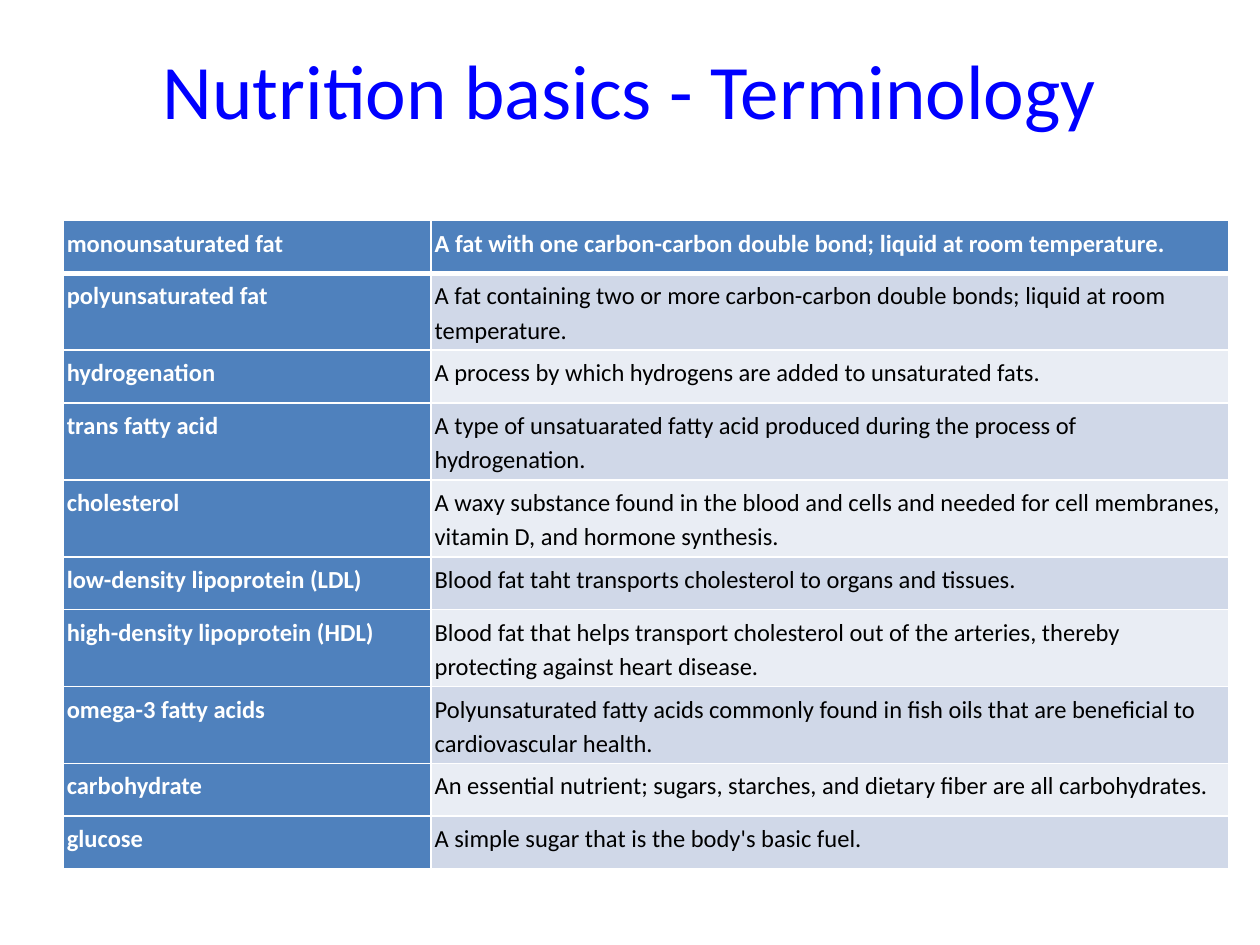
from lxml.etree import SubElement
from pptx import Presentation
from pptx.dml.color import RGBColor
from pptx.enum.text import MSO_ANCHOR, PP_ALIGN
from pptx.oxml.ns import qn
from pptx.util import Inches, Pt

COLORS = {
    "title": "0000FF",
    "term": "4F81BD",
    "odd": "D0D8E8",
    "even": "E9EDF4",
    "light": "FFFFFF",
    "dark": "000000",
}
SHORT, TALL = 0.42, 0.61
TERMS = [
    ("monounsaturated fat", SHORT,
     "A fat with one carbon-carbon double bond; liquid at room temperature."),
    ("polyunsaturated fat", TALL,
     "A fat containing two or more carbon-carbon double bonds; liquid at room temperature."),
    ("hydrogenation", SHORT,
     "A process by which hydrogens are added to unsaturated fats."),
    ("trans fatty acid", TALL,
     "A type of unsatuarated fatty acid produced during the process of hydrogenation."),
    ("cholesterol", TALL,
     "A waxy substance found in the blood and cells and needed for cell membranes, "
     "vitamin D, and hormone synthesis."),
    ("low-density lipoprotein (LDL)", SHORT,
     "Blood fat taht transports cholesterol to organs and tissues."),
    ("high-density lipoprotein (HDL)", TALL,
     "Blood fat that helps transport cholesterol out of the arteries, "
     "thereby protecting against heart disease."),
    ("omega-3 fatty acids", TALL,
     "Polyunsaturated fatty acids commonly found in fish oils that are beneficial "
     "to cardiovascular health."),
    ("carbohydrate", SHORT,
     "An essential nutrient; sugars, starches, and dietary fiber are all carbohydrates."),
    ("glucose", SHORT, "A simple sugar that is the body's basic fuel."),
]


def set_attributes(target, values):
    for name, value in values.items():
        setattr(target, name, value)


class SlideBuilder:
    """Holds the text style and the slide being filled."""

    font_name = "Calibri"
    cell_margin = Inches(0.03)

    def __init__(self, slide):
        self.slide = slide

    def add_text(self, para, text, color, **font_values):
        span = para.add_run()
        span.text = text
        set_attributes(span.font, {"name": self.font_name, **font_values})
        span.font.color.rgb = RGBColor.from_string(COLORS[color])

    def title(self, text, left, top, width, height):
        box = self.slide.shapes.title
        set_attributes(box, {"left": Inches(left), "top": Inches(top),
                             "width": Inches(width), "height": Inches(height)})
        box.text_frame.vertical_anchor = MSO_ANCHOR.MIDDLE
        para = box.text_frame.paragraphs[0]
        para.alignment = PP_ALIGN.CENTER
        self.add_text(para, text, "title", size=Pt(44))

    def borders(self, cell, widths):
        """Draw cell edges; widths maps L, R, T and B to points."""
        properties = cell._tc.get_or_add_tcPr()
        for side, width in widths.items():
            line = SubElement(properties, qn(f"a:ln{side}"), w=str(Pt(width)))
            fill = SubElement(line, qn("a:solidFill"))
            SubElement(fill, qn("a:srgbClr"), val=COLORS["light"])

    def cell(self, cell, text, fill, strong, widths):
        self.borders(cell, widths)
        cell.fill.solid()
        cell.fill.fore_color.rgb = RGBColor.from_string(COLORS[fill])
        sides = ("left", "right", "top", "bottom")
        set_attributes(cell, {f"margin_{side}": self.cell_margin for side in sides})
        para = cell.text_frame.paragraphs[0]
        para.line_spacing = 1.15
        self.add_text(para, text, "light" if strong else "dark", size=Pt(14), bold=strong)

    def term_table(self, terms, left, top, column_widths):
        height = sum(row_height for _, row_height, _ in terms)
        table = self.slide.shapes.add_table(
            len(terms), len(column_widths), Inches(left), Inches(top),
            Inches(sum(column_widths)), Inches(height)).table
        table.first_col = True
        for column, width in zip(table.columns, column_widths):
            column.width = Inches(width)
        for index, (term, row_height, meaning) in enumerate(terms):
            table.rows[index].height = Inches(row_height)
            widths = {"L": 1, "R": 1, "T": 3 if index == 1 else 1,
                      "B": 3 if index == 0 else 1}
            band = "odd" if index % 2 else "even"
            header = index == 0
            self.cell(table.cell(index, 0), term, "term", True, widths)
            self.cell(table.cell(index, 1), meaning, "term" if header else band,
                      header, widths)


def main():
    deck = Presentation()
    set_attributes(deck, {"slide_width": Inches(10), "slide_height": Inches(7.5)})
    page = SlideBuilder(deck.slides.add_slide(deck.slide_layouts[5]))
    page.title("Nutrition basics - Terminology", 0.5, 0.08, 9, 1.25)
    page.term_table(TERMS, 0.5, 1.75, (2.92, 6.33))
    deck.save("out.pptx")


if __name__ == "__main__":
    main()
